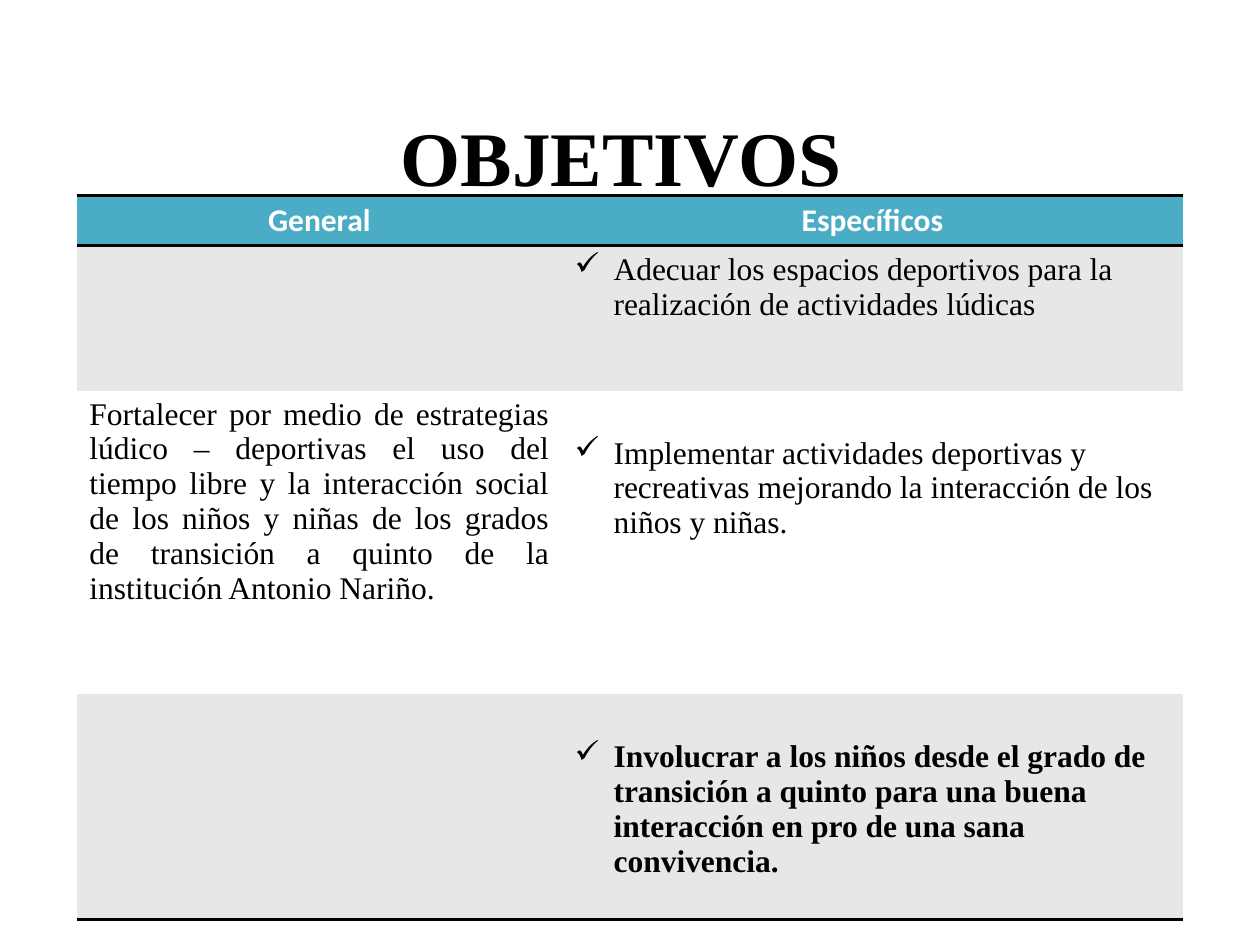
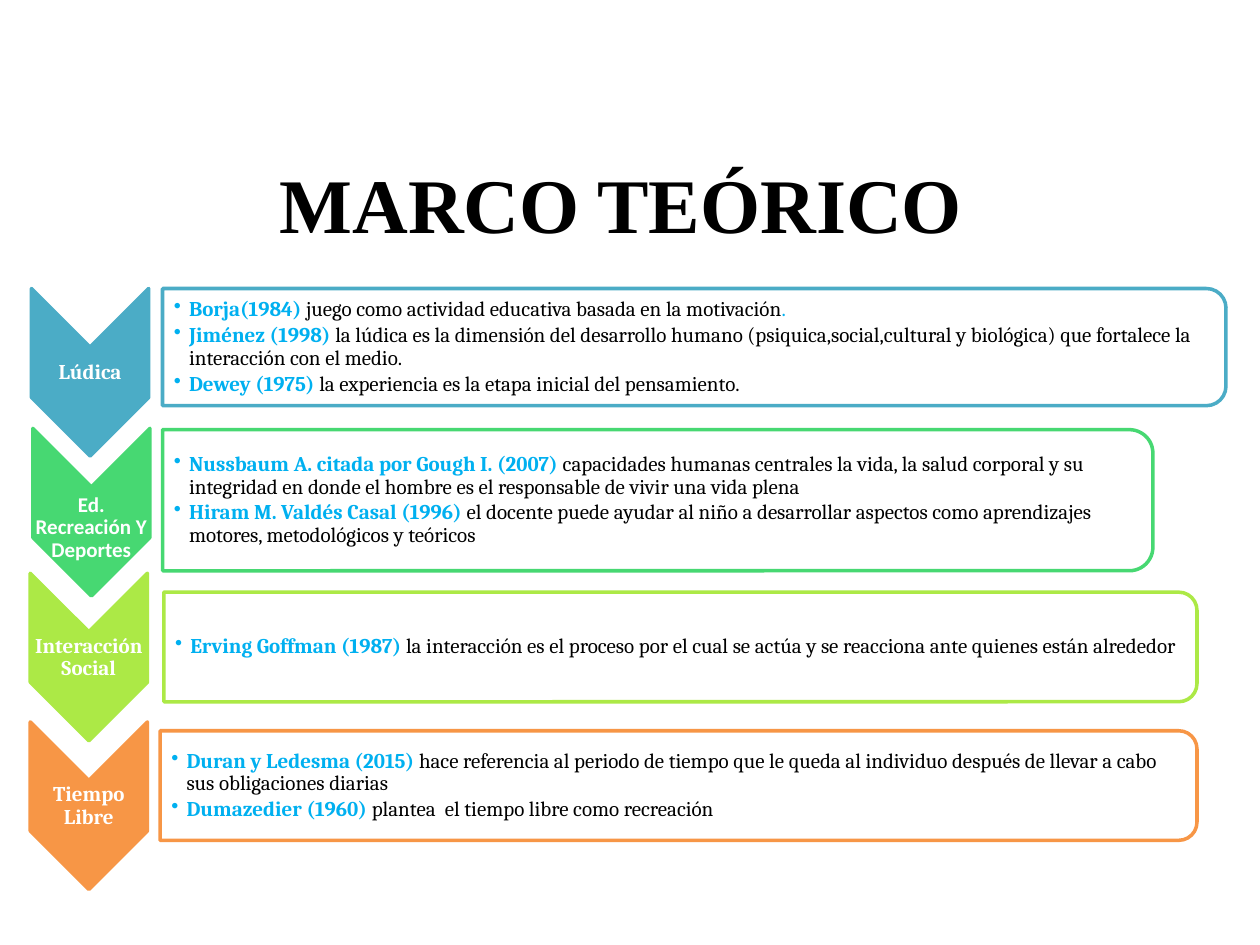
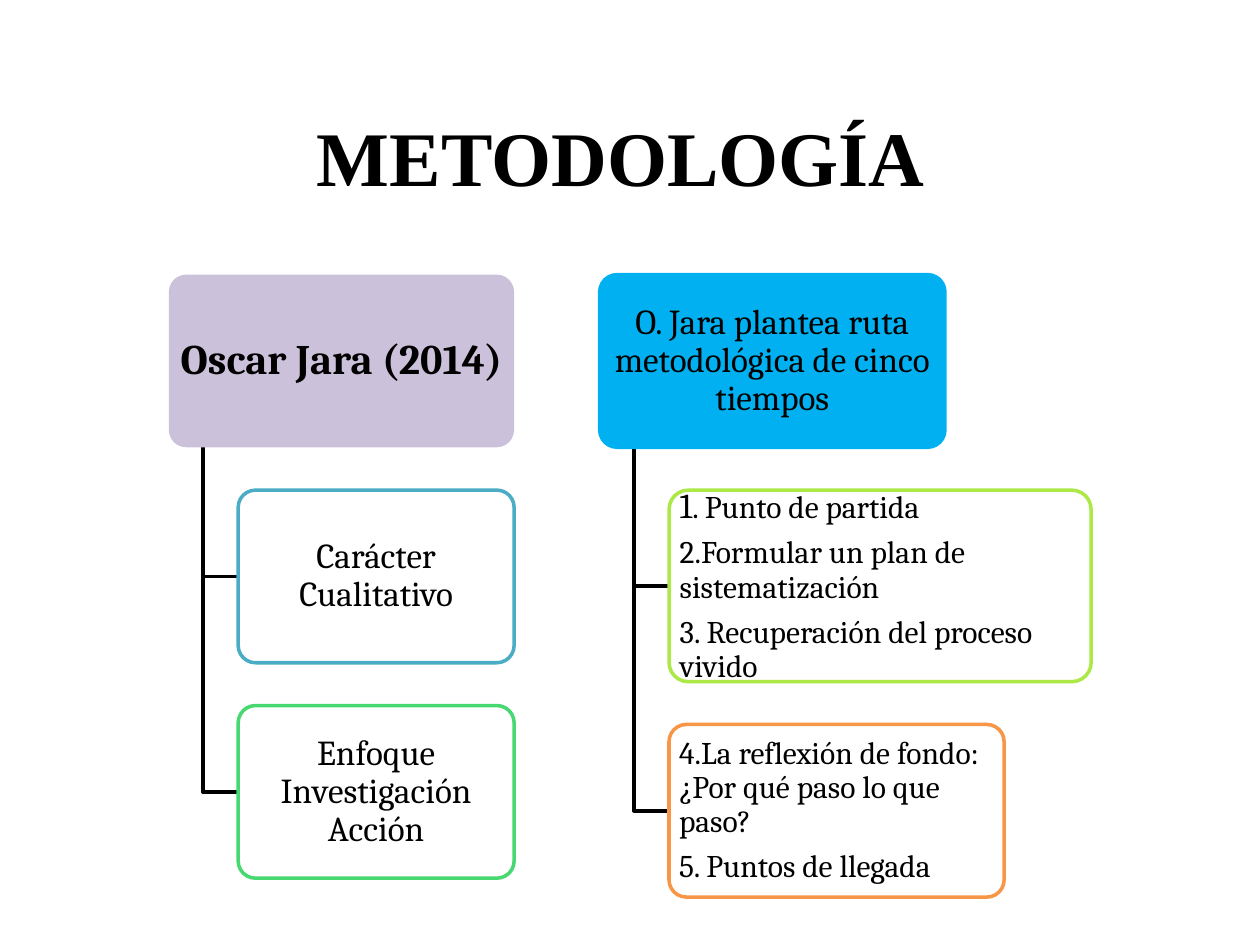
from lxml import etree
from pptx import Presentation
from pptx.dml.color import RGBColor
from pptx.enum.shapes import MSO_SHAPE as SHAPE
from pptx.enum.text import MSO_ANCHOR as ANCHOR, PP_ALIGN as ALIGN
from pptx.oxml import parse_xml
from pptx.oxml.ns import nsdecls, qn
from pptx.util import Inches, Pt

rgb = RGBColor.from_string
BLACK, WHITE, GREY = "000000", "FFFFFF", "E7E7E7"
TEAL, GREEN, LIME, ORANGE = "4BACC6", "47D872", "ACE946", "F79646"
SKY, LILAC = "00B0F0", "CCC1DA"
TIMES, CAMBRIA, CALIBRI = "Times New Roman", "Cambria", "Calibri"


def box(slide, x, y, w, h, kind=None, fill=None, line=None, inset=(0, 0), anchor=ANCHOR.MIDDLE):
    """Add a text box, or a preset shape when a kind is given."""
    at = [Inches(v) for v in (x, y, w, h)]
    if kind is None:
        s = slide.shapes.add_textbox(*at)
    else:
        s = slide.shapes.add_shape(kind, *at)
        s.shadow.inherit = False
        s.fill.solid()
        s.fill.fore_color.rgb = rgb(fill)
        if line:
            s.line.color.rgb = rgb(line)
            s.line.width = Pt(2)
        else:
            s.line.fill.background()
    tf = s.text_frame
    tf.word_wrap = True
    tf.vertical_anchor = anchor
    tf.margin_left = tf.margin_right = Inches(inset[0])
    tf.margin_top = tf.margin_bottom = Inches(inset[1])
    return s


def write(p, runs, font, align=ALIGN.LEFT, bullet=None, indent=0, spacing=None, after=0):
    """Fill a paragraph with runs of (text, size, colour, bold)."""
    if bullet:
        pPr = p._p.get_or_add_pPr()
        pPr.set("marL", str(Inches(indent)))
        pPr.set("indent", str(-Inches(indent)))
        etree.SubElement(pPr, qn("a:buChar")).set("char", bullet)
    p.alignment = align
    p.space_after = Pt(after)
    if spacing:
        p.line_spacing = spacing
    for text, size, color, bold in runs:
        r = p.add_run()
        r.text = text
        r.font.name, r.font.size, r.font.bold = font, Pt(size), bold
        r.font.color.rgb = rgb(color)


prs = Presentation()
prs.slide_width, prs.slide_height = Inches(10), Inches(7.5)

# Slides and their titles
slides = []
for title, top in (("OBJETIVOS", 0.3), ("MARCO TEÓRICO", 0.68), ("METODOLOGÍA", 0.3)):
    slide = prs.slides.add_slide(prs.slide_layouts[6])
    s = box(slide, 0.5, top, 8.86, 1.3, anchor=ANCHOR.BOTTOM)
    write(s.text_frame.paragraphs[0], [(title, 44.1, BLACK, True)], TIMES, ALIGN.CENTER)
    slides.append(slide)
goals, theory, method = slides

# Slide 1: table of goals
heights = (0.4, 1.15, 2.41, 1.79)
general = ("Fortalecer por medio de estrategias lúdico – deportivas el uso del tiempo libre "
           "y la interacción social de los niños y niñas de los grados de transición a quinto "
           "de la institución Antonio Nariño.")
rows = [
    ("General", "Específicos"),
    ("", "Adecuar los espacios deportivos para la realización de actividades lúdicas"),
    (general, "Implementar actividades deportivas y recreativas mejorando la interacción "
              "de los niños y niñas."),
    ("", "Involucrar a los niños desde el grado de transición a quinto para una buena "
         "interacción en pro de una sana convivencia."),
]
frame = goals.shapes.add_table(4, 2, Inches(0.61), Inches(1.55), Inches(8.78), Inches(sum(heights)))
table = frame.table
table.first_row = table.horz_banding = False
plain_style = "{2D5ABB26-0587-4C30-8999-92F81FD0307C}"
table._tbl.tblPr.find(qn("a:tableStyleId")).text = plain_style
for col, width in zip(table.columns, (3.85, 4.93)):
    col.width = Inches(width)
for i, (texts, height, fill) in enumerate(zip(rows, heights, (TEAL, GREY, WHITE, GREY))):
    table.rows[i].height = Inches(height)
    for j, text in enumerate(texts):
        cell = table.cell(i, j)
        cell.fill.solid()
        cell.fill.fore_color.rgb = rgb(fill)
        for edge in {0: "BT", 3: "B"}.get(i, ""):
            cell._tc.get_or_add_tcPr().insert(0, parse_xml(
                f'<a:ln{edge} {nsdecls("a")} w="{Pt(2)}"><a:solidFill>'
                f'<a:srgbClr val="{BLACK}"/></a:solidFill></a:ln{edge}>'))
        p = cell.text_frame.paragraphs[0]
        if i == 0:
            write(p, [(text, 18, WHITE, True)], CALIBRI, ALIGN.CENTER)
        elif j == 1:
            if i > 1:
                cell.margin_top = Inches(0.36)
            write(p, [(text, 18, BLACK, i == 3)], TIMES, bullet="✓", indent=0.31)
        elif text:
            write(p, [(text, 18, BLACK, False)], TIMES, ALIGN.JUSTIFY)

# Slide 2: chevrons (label, font, left, top, label drop) with bars (left, top, width, height)
topics = [
    (TEAL, ("Lúdica", CAMBRIA, 0.25, 2.49, 0.27), (1.29, 2.29, 8.44, 0.93), [
        ("Borja(1984) ", "juego como actividad educativa basada en la motivación", "."),
        ("Jiménez (1998) ", "la lúdica es la dimensión del desarrollo humano "
         "(psiquica,social,cultural y biológica) que fortalece la interacción con el medio."),
        ("Dewey (1975) ", "la experiencia es la etapa inicial del pensamiento.")]),
    (GREEN, ("Ed. Recreación Y Deportes", CALIBRI, 0.26, 3.6, 0.39), (1.29, 3.41, 7.86, 1.12), [
        ("Nussbaum A. citada por Gough I. (2007) ", "capacidades humanas centrales la vida, "
         "la salud corporal y su integridad en donde el hombre es el responsable de vivir "
         "una vida plena"),
        ("Hiram M. Valdés Casal (1996) ", "el docente puede ayudar al niño a desarrollar "
         "aspectos como aprendizajes motores, metodológicos y teóricos")]),
    (LIME, ("Interacción Social", CAMBRIA, 0.24, 4.75, 0.27), (1.3, 4.7, 8.2, 0.87), [
        ("Erving Goffman (1987) ", "la interacción es el proceso por el cual se actúa y se "
         "reacciona ante quienes están alrededor")]),
    (ORANGE, ("Tiempo Libre", CAMBRIA, 0.24, 5.93, 0.27), (1.27, 5.8, 8.23, 0.87), [
        ("Duran y Ledesma (2015) ", "hace referencia al periodo de tiempo que le queda al "
         "individuo después de llevar a cabo sus obligaciones diarias"),
        ("Dumazedier (1960) ", "plantea  el tiempo libre como recreación")]),
]
for color, (label, font, left, top, drop), (x, y, w, h), authors in topics:
    s = box(theory, left - 0.2, top, 1.33, 0.93, SHAPE.CHEVRON, color, color)
    s.rotation = 90
    s = box(theory, left, top + drop, 0.93, 0.4, inset=(0.01, 0.01))
    write(s.text_frame.paragraphs[0], [(label, 12, WHITE, True)], font, ALIGN.CENTER, spacing=0.9)

    # The bar is turned a quarter, so its sides swap around the same centre
    s = box(theory, x + (w - h) / 2, y + (h - w) / 2, h, w,
            SHAPE.ROUND_2_SAME_RECTANGLE, WHITE, color)
    s.rotation = 90
    tf = box(theory, x, y + 0.04, w - 0.05, h - 0.08, inset=(0.01, 0.01)).text_frame
    tf.margin_left = Inches(0.09)
    for i, (author, idea, *end) in enumerate(authors):
        p = tf.add_paragraph() if i else tf.paragraphs[0]
        runs = [(author, 12, SKY, True), (idea, 12, BLACK, False)]
        runs += [(mark, 12, SKY, False) for mark in end]
        write(p, runs, CAMBRIA, bullet="•", indent=0.12, spacing=0.9, after=1.8)

# Slide 3: two trees, each with a root and children (line, top, width, height, paragraphs)
ROOT_TOP, ROOT_W, NODE_H = 2.18, 2.74, 1.37
TRUNK, BRANCH = 0.27, 0.55
trees = [
    (1.34, LILAC, None, ("Oscar Jara (2014)", 24, BLACK, True), ALIGN.CENTER, [
        (TEAL, 3.89, 2.19, NODE_H, [[("Carácter Cualitativo", 20, BLACK, False)]]),
        (GREEN, 5.6, 2.19, NODE_H, [[("Enfoque Investigación Acción", 20, BLACK, False)]])]),
    (4.76, SKY, SKY, ("O. Jara plantea ruta metodológica de cinco tiempos", 20, BLACK, False),
     ALIGN.LEFT, [
        (LIME, 3.89, 3.35, 1.52, [
            [("1", 20, BLACK, False), (". Punto de partida", 18, BLACK, False)],
            [("2.Formular un plan de sistematización", 18, BLACK, False)],
            [("3. Recuperación del proceso vivido", 18, BLACK, False)]]),
        (ORANGE, 5.75, 2.66, NODE_H, [
            [("4.La reflexión de fondo: ¿Por qué paso lo que paso?", 18, BLACK, False)],
            [("5. Puntos de llegada", 18, BLACK, False)]])]),
]
for x, fill, line, root, align, children in trees:
    nodes = [(x, ROOT_TOP, ROOT_W, NODE_H, fill, line, ALIGN.CENTER, [[root]])]
    for color, y, w, h, paragraphs in children:
        base, middle = Inches(ROOT_TOP + NODE_H), Inches(y + h / 2)
        elbow = method.shapes.build_freeform(Inches(x + TRUNK), base)
        elbow.add_line_segments([(Inches(x + TRUNK), middle), (Inches(x + BRANCH), middle)],
                                close=False)
        s = elbow.convert_to_shape()
        s.shadow.inherit = False
        s.fill.background()
        s.line.color.rgb = rgb(BLACK)
        s.line.width = Pt(2)
        nodes.append((x + BRANCH, y, w, h, WHITE, color, align, paragraphs))
    for left, y, w, h, paint, edge, side, paragraphs in nodes:
        s = box(method, left, y, w, h, SHAPE.ROUNDED_RECTANGLE, paint, edge, inset=(0.04, 0.03))
        s.adjustments[0] = 0.1
        tf = s.text_frame
        for i, runs in enumerate(paragraphs):
            p = tf.add_paragraph() if i else tf.paragraphs[0]
            last = i == len(paragraphs) - 1
            write(p, runs, CAMBRIA, side, spacing=0.9, after=0 if last else 6.3)

prs.save("out.pptx")
